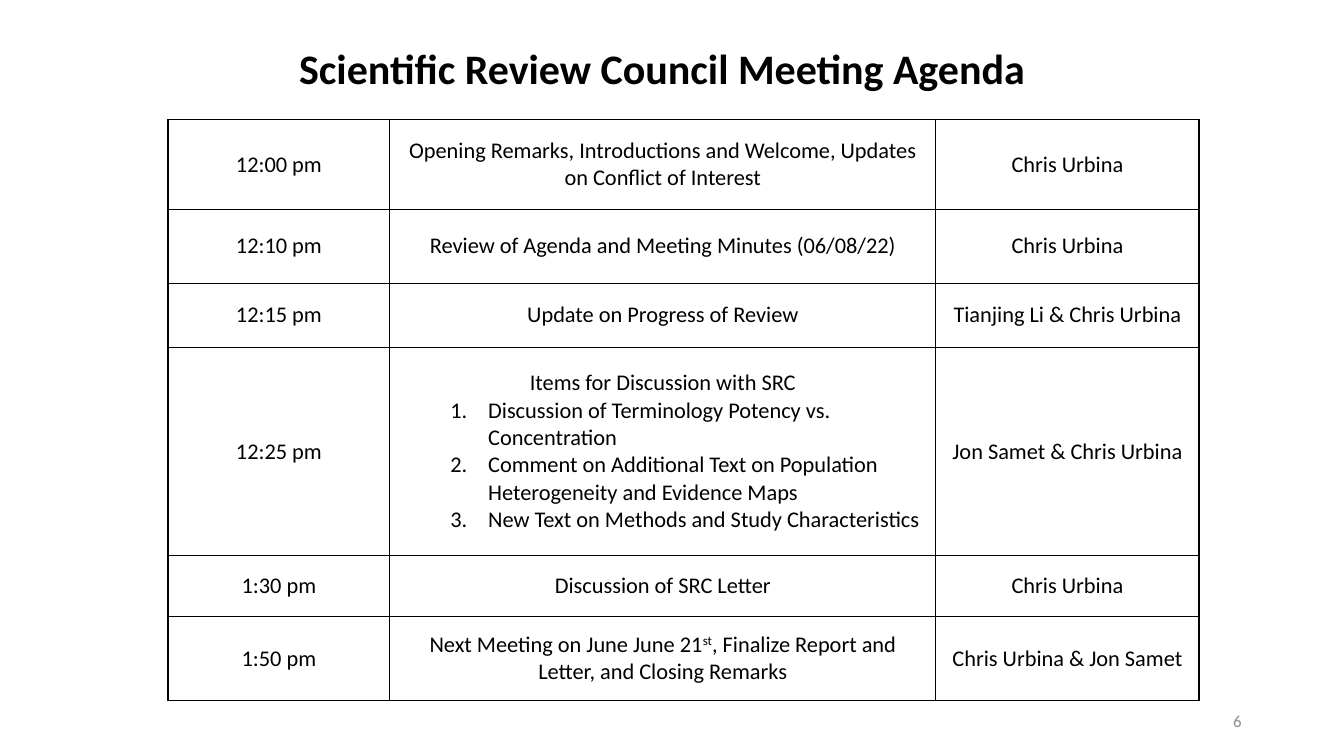
from dataclasses import dataclass

from lxml import etree
from pptx import Presentation
from pptx.dml.color import RGBColor
from pptx.enum import text
from pptx.oxml import ns
from pptx.util import Pt

ALIGN = text.PP_ALIGN
MIDDLE = text.MSO_ANCHOR.MIDDLE


@dataclass(frozen=True)
class Theme:
    face: str = "Calibri"
    ink: str = "000000"
    grey: str = "8C8C8C"
    head: int = 30
    body: int = 16
    foot: int = 12
    rule: int = 1


class Page:
    def __init__(self, deck, theme):
        self.theme = theme
        self.slide = deck.slides.add_slide(deck.slide_layouts[6])

    def style(self, para, size, color, align, bold=False):
        para.alignment = align
        font = para.font
        font.name, font.size, font.bold = self.theme.face, Pt(size), bold
        font.color.rgb = RGBColor.from_string(color)

    def label(self, box, words, size, color, align, bold=False):
        frame = self.slide.shapes.add_textbox(*map(Pt, box)).text_frame
        frame.word_wrap = True
        frame.vertical_anchor = MIDDLE
        para = frame.paragraphs[0]
        para.add_run().text = words
        self.style(para, size, color, align, bold)

    def border(self, cell):
        props = cell._tc.get_or_add_tcPr()
        for side in ("lnL", "lnR", "lnT", "lnB"):
            line = etree.SubElement(props, ns.qn(f"a:{side}"), w=str(Pt(self.theme.rule)))
            fill = etree.SubElement(line, ns.qn("a:solidFill"))
            etree.SubElement(fill, ns.qn("a:srgbClr"), val=self.theme.ink)

    def number(self, para):
        para.level = 1
        props = para._p.get_or_add_pPr()
        props.set("marL", str(Pt(63)))
        props.set("indent", str(-Pt(27)))
        etree.SubElement(props, ns.qn("a:buFont"), typeface="+mj-lt")
        etree.SubElement(props, ns.qn("a:buAutoNum"), type="arabicPeriod")

    def entry(self, cell, words):
        frame = cell.text_frame
        for i, line in enumerate(words.split("\n")):
            para = frame.add_paragraph() if i else frame.paragraphs[0]
            if i:
                self.number(para)
            for j, part in enumerate(line.split("^")):
                run = para.add_run()
                run.text = part
                if j % 2:
                    run.font._element.set("baseline", "30000")
            align = ALIGN.LEFT if i else ALIGN.CENTER
            self.style(para, self.theme.body, self.theme.ink, align)

    def table(self, left, top, cols, rows, data):
        size = map(Pt, (left, top, sum(cols), sum(rows)))
        grid = self.slide.shapes.add_table(len(rows), len(cols), *size).table
        grid.first_row = grid.horz_banding = False
        for col, width in zip(grid.columns, cols):
            col.width = Pt(width)
        for row, height, items in zip(grid.rows, rows, data):
            row.height = Pt(height)
            for cell, words in zip(row.cells, items):
                cell.vertical_anchor = MIDDLE
                self.border(cell)
                cell.fill.background()
                self.entry(cell, words)


AGENDA = [
    ("12:00 pm", "Opening Remarks, Introductions and Welcome, Updates on Conflict of Interest",
     "Chris Urbina"),
    ("12:10 pm", "Review of Agenda and Meeting Minutes (06/08/22)", "Chris Urbina"),
    ("12:15 pm", "Update on Progress of Review", "Tianjing Li & Chris Urbina"),
    ("12:25 pm", "Items for Discussion with SRC\n"
     "Discussion of Terminology Potency vs. Concentration\n"
     "Comment on Additional Text on Population Heterogeneity and Evidence Maps\n"
     "New Text on Methods and Study Characteristics", "Jon Samet & Chris Urbina"),
    ("1:30 pm", "Discussion of SRC Letter", "Chris Urbina"),
    ("1:50 pm", "Next Meeting on June June 21^st^, Finalize Report and Letter, and Closing Remarks",
     "Chris Urbina & Jon Samet"),
]


def main():
    deck = Presentation()
    deck.slide_width, deck.slide_height = Pt(960), Pt(540)
    theme = Theme()
    page = Page(deck, theme)
    page.label((678, 500.5, 216, 29), "6", theme.foot, theme.grey, ALIGN.RIGHT)
    page.label((206.6, 26.6, 546, 44), "Scientific Review Council Meeting Agenda",
               theme.head, theme.ink, ALIGN.LEFT, True)
    page.table(120, 85.5, (158.5, 390, 188), (64, 52.8, 46, 148.5, 43.5, 60.3), AGENDA)
    deck.save("out.pptx")


if __name__ == "__main__":
    main()
